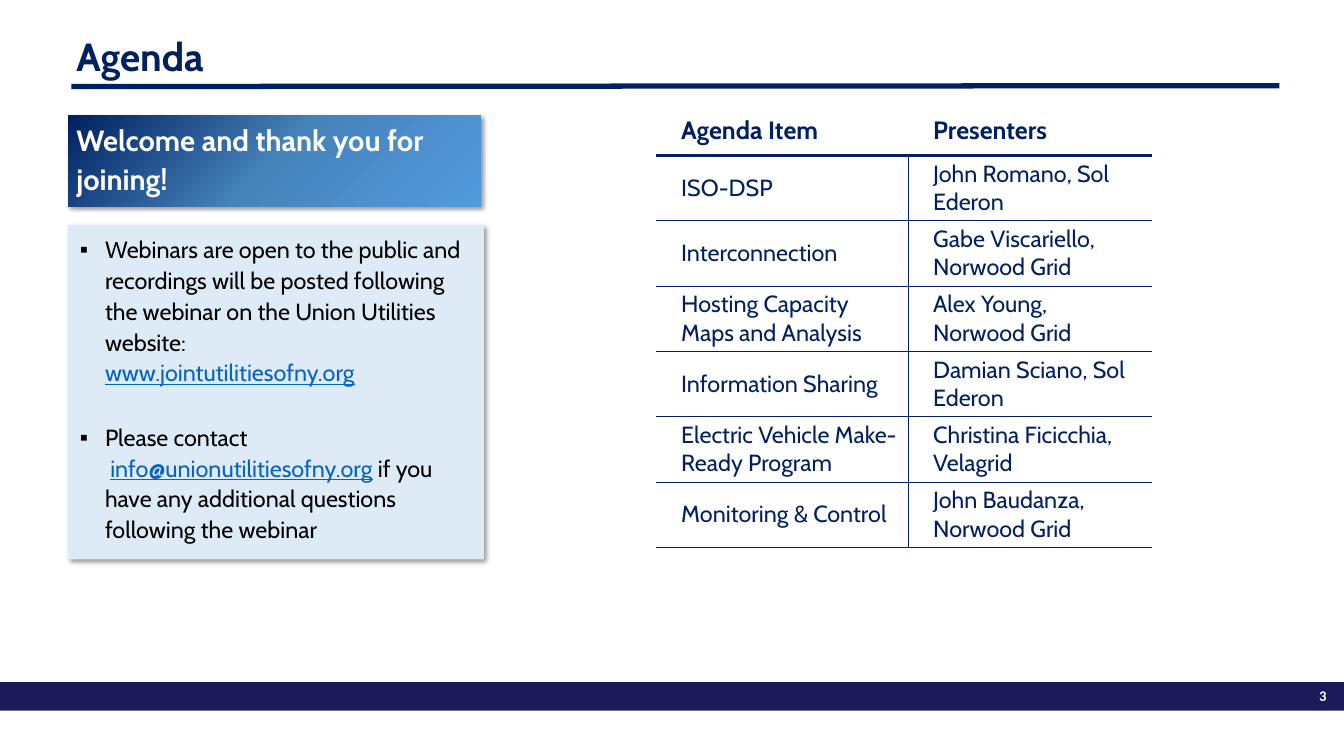
"""Builds the agenda slide: welcome panel on the left, presenter table on the right."""
from copy import deepcopy

from pptx import Presentation
from pptx.dml.color import RGBColor
from pptx.enum.shapes import MSO_CONNECTOR as Conn, MSO_SHAPE as Kind
from pptx.enum.text import MSO_ANCHOR as Anchor, MSO_AUTO_SIZE as Auto, PP_ALIGN as Align
from pptx.oxml.ns import qn
from pptx.oxml.xmlchemy import OxmlElement as Node
from pptx.util import Pt

NAVY, WHITE, BLACK, BLUE = "002060", "FFFFFF", "000000", "0563C1"
TITLE = "Agenda"
HELLO = "Welcome and thank you for joining!"
PAGE = "3"
LINK = {"color": BLUE, "underline": True}
NOTES = [
    [("Webinars are open to the public and recordings will be posted following "
      "the webinar on the Union Utilities website:", {}), ("\n", {}),
     ("www.jointutilitiesofny.org", LINK)],
    [("Please contact", {}), ("\n", {}), (" ", {}),
     ("info@unionutilitiesofny.org", LINK),
     (" if you have any additional questions following the webinar", {})],
]
ROWS = [
    ("Agenda Item", "Presenters"),
    ("ISO-DSP", "John Romano, Sol Ederon"),
    ("Interconnection", "Gabe Viscariello, Norwood Grid"),
    ("Hosting Capacity Maps and Analysis", "Alex Young, Norwood Grid"),
    ("Information Sharing", "Damian Sciano, Sol Ederon"),
    ("Electric Vehicle Make-Ready Program", "Christina Ficicchia, Velagrid"),
    ("Monitoring & Control", "John Baudanza, Norwood Grid"),
]
WIDTHS = (216, 208.8)
STOPS = [(0, NAVY), (0.5, "4583BB"), (1, "529BDE")]

HEAD = {"name": "Cabin", "size": Pt(33.6), "bold": True, "color": NAVY}
LEAD = HEAD | {"size": Pt(25), "color": WHITE}
BODY = HEAD | {"size": Pt(20), "bold": False, "color": BLACK}
CELL = BODY | {"color": NAVY}
TOP = HEAD | {"size": Pt(21.5)}
FOOT = LEAD | {"name": "Calibri", "size": Pt(12.6)}


def rgb(code):
    return RGBColor.from_string(code)


def style(item, vals):
    for key, val in vals.items():
        setattr(item, key, val)


def write(para, text, look):
    run = para.add_run()
    run.text = text
    style(run.font, {k: v for k, v in look.items() if k != "color"})
    run.font.color.rgb = rgb(look["color"])


def place(shape, *box):
    style(shape, dict(zip(("left", "top", "width", "height"), map(Pt, box))))


def child(parent, tag, **atts):
    node = Node(tag)
    for key, val in atts.items():
        node.set(key, str(val))
    parent.append(node)
    return node


def block(slide, box, code=None):
    shape = slide.shapes.add_shape(Kind.RECTANGLE, *map(Pt, box))
    shape.shadow.inherit = False
    shape.line.fill.background()
    if code:
        shape.fill.solid()
        shape.fill.fore_color.rgb = rgb(code)
    return shape


def shade(shape):
    glow = child(shape.element.spPr.find(qn("a:effectLst")), "a:outerShdw",
                 blurRad=Pt(4), dist=Pt(3), dir=45 * 60000, algn="tl", rotWithShape=0)
    child(child(glow, "a:srgbClr", val=BLACK), "a:alpha", val=40000)


def blend(shape):
    fill = shape.fill
    fill.gradient()
    fill.gradient_angle = 315
    group = shape.element.spPr.find(".//" + qn("a:gsLst"))
    group.append(deepcopy(group[-1]))
    for stop, (pos, code) in zip(fill.gradient_stops, STOPS):
        stop.position = pos
        stop.color.rgb = rgb(code)


def edge(cell, side, width):
    line = child(cell._tc.get_or_add_tcPr(), "a:ln" + side, w=Pt(width))
    if width:
        child(child(line, "a:solidFill"), "a:srgbClr", val=NAVY)
    else:
        child(line, "a:noFill")


def bullet(para):
    props = para._p.get_or_add_pPr()
    props.set("marL", str(Pt(21.6)))
    props.set("indent", str(-Pt(21.6)))
    child(props, "a:buFont", typeface="Arial")
    child(props, "a:buChar", char="▪")


def frame(slide):
    block(slide, (0, 584.64, 1152, 24.48), "1B1B59")
    note = slide.shapes.add_textbox(*map(Pt, (1096.56, 585.36, 47.52, 22.32))).text_frame
    note.word_wrap = True
    note.paragraphs[0].alignment = Align.RIGHT
    write(note.paragraphs[0], PAGE, FOOT)
    rule = slide.shapes.add_connector(
        Conn.STRAIGHT, *map(Pt, (61.2, 74.16, 1096.56, 73.44)))
    rule.line.color.rgb = rgb(NAVY)
    rule.line.width = Pt(4.5)
    child(rule.element.spPr, "a:effectLst")


def heading(title):
    place(title, 58.32, 29.52, 1035.36, 41.04)
    style(title.text_frame, {"vertical_anchor": Anchor.MIDDLE, "auto_size": Auto.NONE})
    para = title.text_frame.paragraphs[0]
    style(para, {"alignment": Align.LEFT, "line_spacing": 0.9})
    write(para, TITLE, HEAD)


def welcome(slide, body):
    panel = block(slide, (58.32, 192.96, 356.4, 286.56), "DEEBF7")
    shade(panel)
    body.element.addprevious(panel.element)
    place(body, 61.2, 195.84, 356.4, 190.08)
    text = body.text_frame
    style(text, {"vertical_anchor": Anchor.TOP, "auto_size": Auto.NONE})
    for i, parts in enumerate(NOTES):
        para = text.add_paragraph() if i else text.paragraphs[0]
        bullet(para)
        style(para, {"line_spacing": 1.1, "space_after": Pt(14.4),
                     "space_before": Pt(14.4 if i else 0)})
        for words, look in parts:
            if words == "\n":
                para.add_line_break()
            else:
                write(para, words, BODY | look)
    banner = block(slide, (58.32, 98.64, 353.52, 78.48))
    blend(banner)
    shade(banner)
    style(banner.text_frame, {"word_wrap": True, "vertical_anchor": Anchor.TOP})
    para = banner.text_frame.paragraphs[0]
    style(para, {"alignment": Align.LEFT, "line_spacing": 1.1, "space_after": Pt(8.4)})
    write(para, HELLO, LEAD)


def agenda(slide):
    high = [43.2] + [56] * (len(ROWS) - 1)
    table = slide.shapes.add_table(len(ROWS), len(WIDTHS), *map(
        Pt, (562.32, 90, sum(WIDTHS), sum(high)))).table
    style(table, {"first_row": False, "horz_banding": False})
    for col, width in zip(table.columns, WIDTHS):
        col.width = Pt(width)
    for r, row in enumerate(ROWS):
        table.rows[r].height = Pt(high[r])
        for c, words in enumerate(row):
            cell = table.cell(r, c)
            inner = 0.5 if r else 0
            above = (0, 3)[r] if r < 2 else 0.5
            for side, width in (("L", inner * c), ("R", inner * (1 - c)),
                                ("T", above), ("B", 0.5 if r else 3)):
                edge(cell, side, width)
            cell.fill.background()
            style(cell, {"margin_left": Pt(21.6), "vertical_anchor": Anchor.MIDDLE})
            write(cell.text_frame.paragraphs[0], words, CELL if r else TOP)


def main():
    deck = Presentation()
    style(deck, {"slide_width": Pt(1152), "slide_height": Pt(648)})
    slide = deck.slides.add_slide(deck.slide_layouts[1])
    title, body = slide.placeholders
    frame(slide)
    heading(title)
    welcome(slide, body)
    agenda(slide)
    deck.save("out.pptx")


if __name__ == "__main__":
    main()
